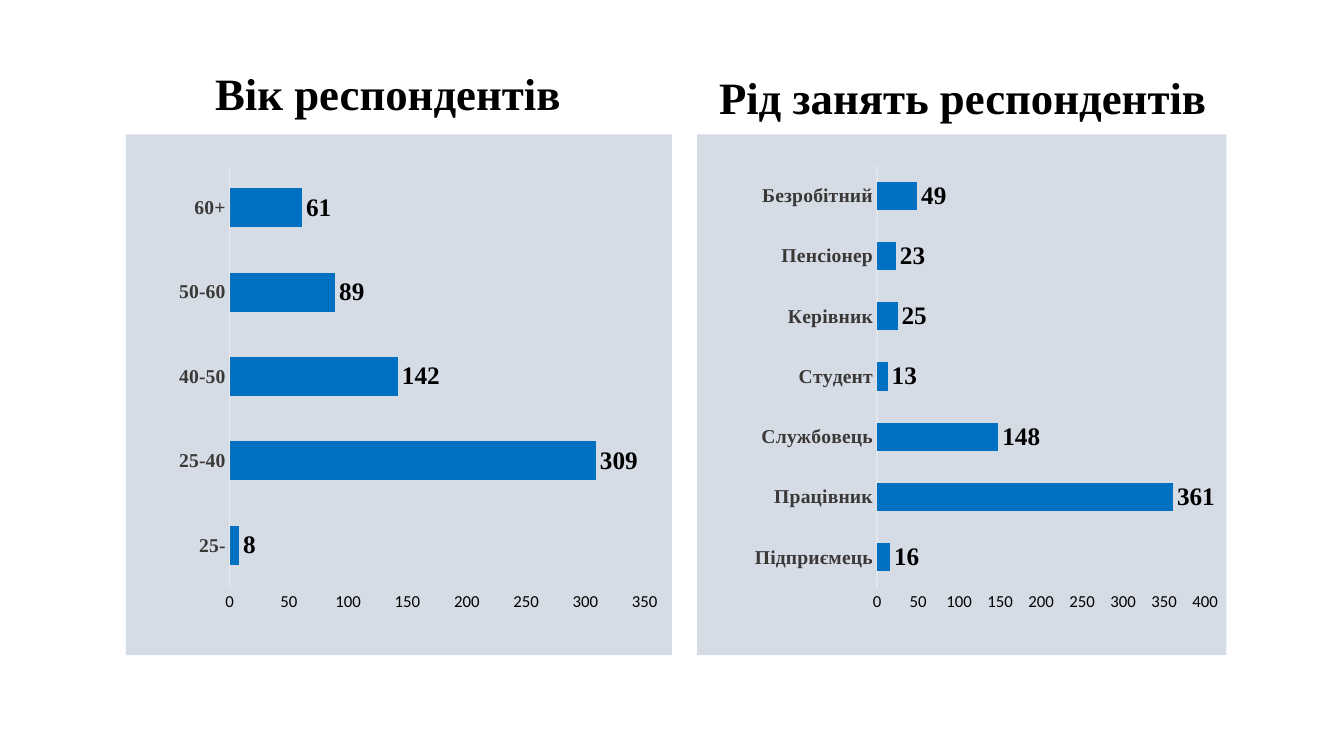
from lxml import etree
from pptx import Presentation
from pptx.chart.data import CategoryChartData
from pptx.dml.color import RGBColor
from pptx.enum.chart import XL_CHART_TYPE as ChartType
from pptx.enum.chart import XL_LABEL_POSITION as LabelPosition
from pptx.enum.chart import XL_TICK_MARK as TickMark
from pptx.oxml import parse_xml
from pptx.oxml.ns import nsdecls, qn
from pptx.util import Pt

SERIF, SANS = "Times New Roman", "Calibri"
BLACK, GREY, PALE = "000000", "3B3838", "F2F2F2"
BAR, PANEL = "0070C0", "D6DCE5"
CHART_TOP, CHART_HEIGHT = 96, 372

AGES = {"25-": 8, "25-40": 309, "40-50": 142, "50-60": 89, "60+": 61}
OCCUPATIONS = {
    "Підприємець": 16, "Працівник": 361, "Службовець": 148, "Студент": 13,
    "Керівник": 25, "Пенсіонер": 23, "Безробітний": 49,
}


def color(value):
    return RGBColor.from_string(value)


def format_font(font, size, name=SERIF, fill=BLACK, bold=False):
    font.size, font.name, font.bold = Pt(size), name, bold
    font.fill.solid()
    font.fill.fore_color.rgb = color(fill)


def add_text(slide, text, box, **font_format):
    shape = slide.shapes.add_textbox(*map(Pt, box))
    frame = shape.text_frame
    frame.word_wrap = True
    frame.margin_left = frame.margin_right = Pt(9.6)
    frame.margin_top = frame.margin_bottom = Pt(4.8)
    run = frame.paragraphs[0].add_run()
    run.text = text
    format_font(run.font, **font_format)


def style_line(chart, line, width, opacity, query):
    """Give an axis or grid line its pale, partly transparent colour."""
    line.width = Pt(width)
    line.color.rgb = color(PALE)
    for element in chart.element.xpath(query + "/c:spPr/a:ln//a:srgbClr"):
        etree.SubElement(element, qn("a:alpha"), val=str(opacity * 1000))


def fill_panel(chart):
    chart.element.find(qn("c:chart")).addnext(parse_xml(
        f'<c:spPr {nsdecls("c", "a")}><a:solidFill><a:srgbClr val="{PANEL}"/>'
        "</a:solidFill><a:ln><a:noFill/></a:ln></c:spPr>"))


def place_plot(chart, layout):
    """Set the inner plot area as fractions of the chart."""
    plot_area = chart.element.find(".//" + qn("c:plotArea"))
    for old_layout in plot_area.findall(qn("c:layout")):
        plot_area.remove(old_layout)
    modes = '<c:layoutTarget val="inner"/><c:xMode val="edge"/><c:yMode val="edge"/>'
    sizes = "".join(f'<c:{key} val="{value}"/>' for key, value in zip("xywh", layout))
    plot_area.insert(0, parse_xml(
        f'<c:layout {nsdecls("c")}><c:manualLayout>{modes}{sizes}'
        "</c:manualLayout></c:layout>"))


def add_bar_chart(slide, counts, box, layout, maximum):
    data = CategoryChartData()
    data.categories = list(counts)
    data.add_series("Series 1", list(counts.values()))
    chart = slide.shapes.add_chart(
        ChartType.BAR_CLUSTERED, *map(Pt, box), data).chart
    chart.has_legend = chart.has_title = False
    format_font(chart.font, 10, SANS)
    fill_panel(chart)
    place_plot(chart, layout)

    categories, values = chart.category_axis, chart.value_axis
    for axis in (categories, values):
        axis.major_tick_mark = axis.minor_tick_mark = TickMark.NONE
    format_font(categories.tick_labels.font, 14, fill=GREY, bold=True)
    format_font(values.tick_labels.font, 12, SANS)
    style_line(chart, categories.format.line, 1, 54, ".//c:catAx")
    values.format.line.fill.background()
    values.has_major_gridlines = True
    style_line(chart, values.major_gridlines.format.line, 0.75, 10,
               ".//c:majorGridlines")
    values.minimum_scale, values.maximum_scale, values.major_unit = 0, maximum, 50

    plot = chart.plots[0]
    plot.vary_by_categories = False
    plot.gap_width, plot.overlap = 115, -20
    bars = plot.series[0]
    bars.format.fill.solid()
    bars.format.fill.fore_color.rgb = color(BAR)
    labels = bars.data_labels
    labels.show_value = True
    labels.position = LabelPosition.OUTSIDE_END
    format_font(labels.font, 18, bold=True)


def add_panel(slide, title, counts, left, width, title_box, layout, maximum):
    """Add a heading and its chart; the heading's left is relative to the panel."""
    offset, *rest = title_box
    add_text(slide, title, (left + offset, *rest), size=32, bold=True)
    add_bar_chart(slide, counts, (left, CHART_TOP, width, CHART_HEIGHT),
                  layout, maximum)


def main():
    presentation = Presentation()
    presentation.slide_width, presentation.slide_height = Pt(960), Pt(540)
    slide = presentation.slides.add_slide(presentation.slide_layouts[6])
    add_panel(slide, "Вік респондентів", AGES, 90, 390,
              (54, 42, 288, 48), (0.19, 0.06, 0.76, 0.81), 350)
    add_panel(slide, "Рід занять респондентів", OCCUPATIONS, 498, 378,
              (6, 45, 402, 87), (0.34, 0.06, 0.62, 0.81), 400)
    presentation.save("out.pptx")


if __name__ == "__main__":
    main()
